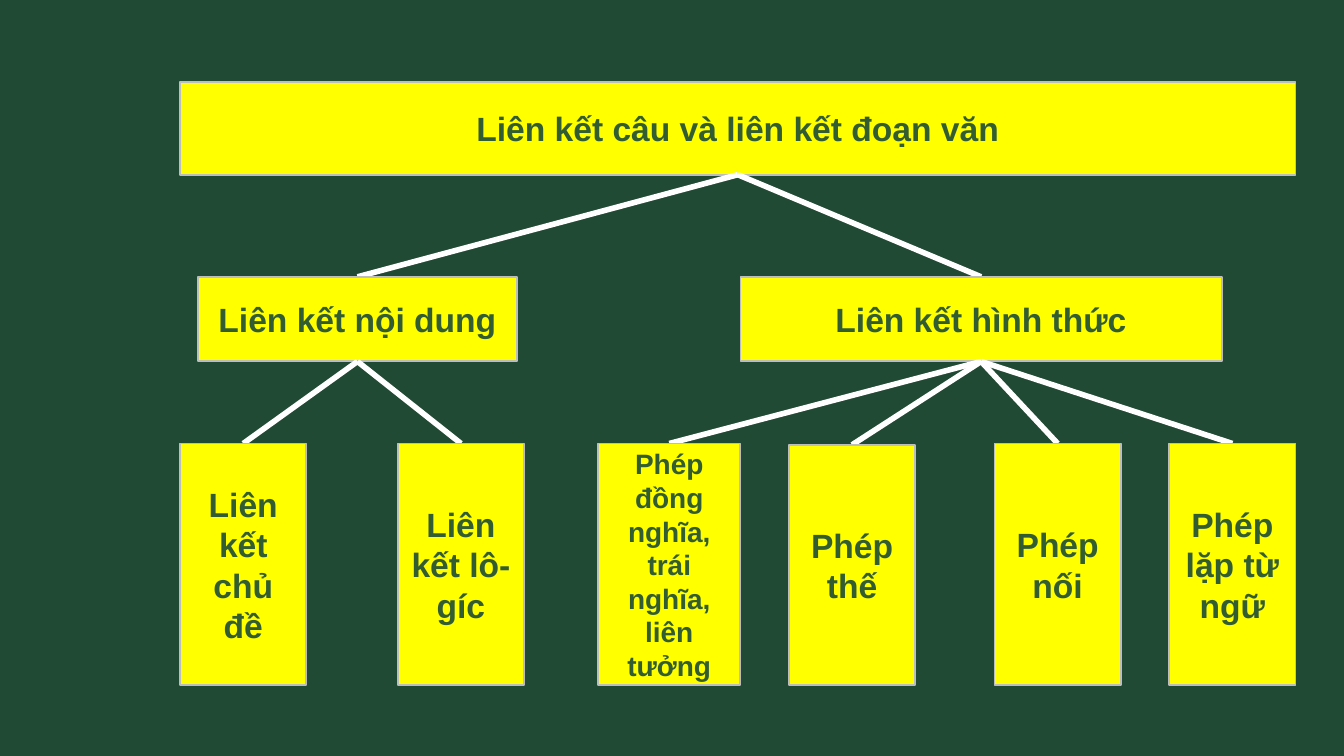
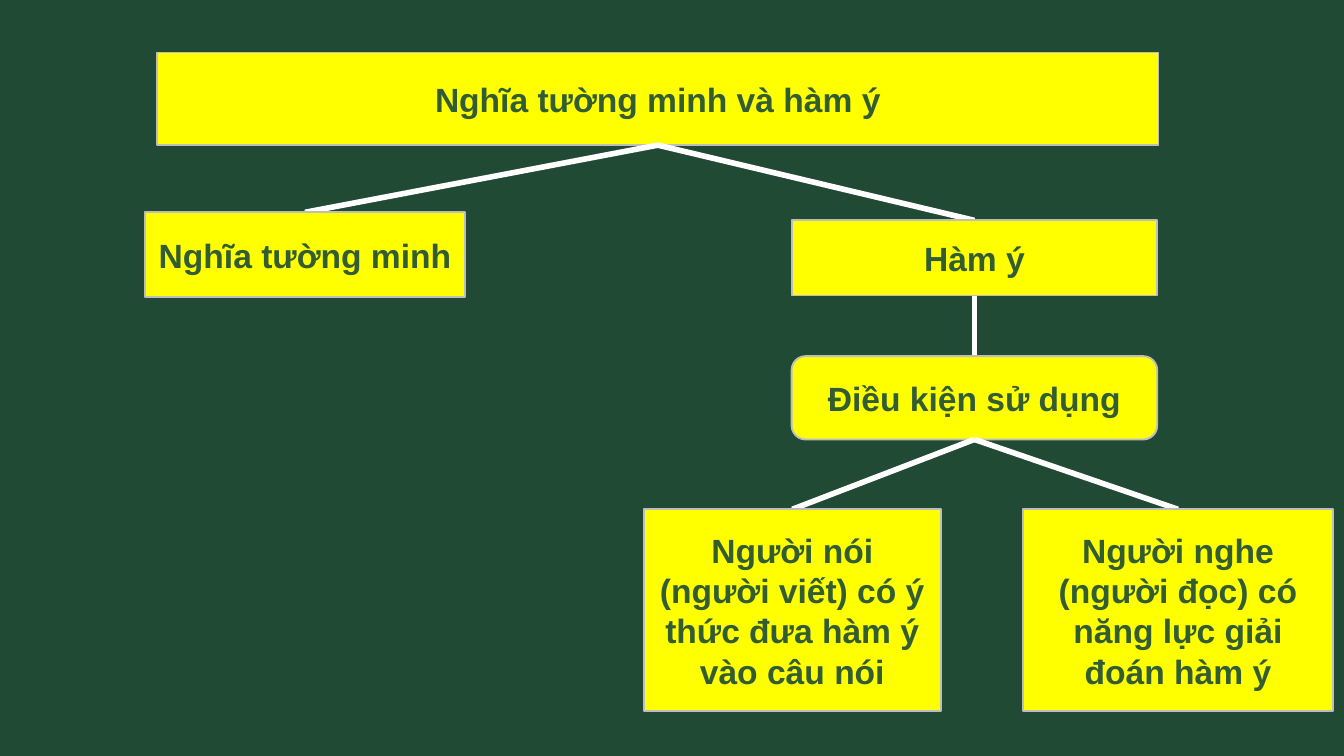
from dataclasses import dataclass

from lxml import etree
from pptx import Presentation
from pptx import slide as s
from pptx import util as u
from pptx.dml import color, fill
from pptx.enum import shapes, text
from pptx.oxml import ns
from pptx.shapes import autoshape

PX_PER_INCH = 100
SLIDE_WIDTH = 1000
BOARD = "214A34"
BOX_FILL = "FFFF00"
BOX_BORDER = "BDBDBD"
BOX_TEXT = "325C31"
BRANCH = "FFFFFF"
FONT = "Arial"
RECTANGLE = shapes.MSO_SHAPE.RECTANGLE
ROUNDED = shapes.MSO_SHAPE.ROUNDED_RECTANGLE
TOP, BOTTOM = 0, 2


@dataclass(frozen=True)
class Box:
    label: str
    left: int
    top: int
    width: int
    height: int
    children: tuple["Box", ...] = ()
    font_size: int = 18
    outline: shapes.MSO_SHAPE = RECTANGLE


def px(length: int) -> u.Emu:
    return u.Emu(length * u.Inches(1) // PX_PER_INCH)


def paint(target: fill.FillFormat, hex_colour: str) -> None:
    target.solid()
    target.fore_color.rgb = color.RGBColor.from_string(hex_colour)


def draw_box(slide: s.Slide, box: Box) -> autoshape.Shape:
    shape = slide.shapes.add_shape(
        box.outline, px(box.left), px(box.top), px(box.width), px(box.height)
    )
    shape.shadow.inherit = False
    paint(shape.fill, BOX_FILL)
    paint(shape.line.fill, BOX_BORDER)
    shape.line.width = u.Pt(1)

    frame = shape.text_frame
    frame.word_wrap = True
    frame.vertical_anchor = text.MSO_ANCHOR.MIDDLE
    frame.margin_left = frame.margin_right = px(7)
    frame.margin_top = frame.margin_bottom = px(4)
    frame.text = box.label
    paragraph = frame.paragraphs[0]
    paragraph.alignment = text.PP_ALIGN.CENTER
    for run in paragraph.runs:
        run.font.name = FONT
        run.font.size = u.Pt(box.font_size)
        run.font.bold = True
        paint(run.font.fill, BOX_TEXT)
    return shape


def draw_branch(slide: s.Slide, parent: autoshape.Shape, child: autoshape.Shape) -> None:
    branch = slide.shapes.add_connector(shapes.MSO_CONNECTOR.STRAIGHT, 0, 0, 0, 0)
    branch.begin_connect(parent, BOTTOM)
    branch.end_connect(child, TOP)
    paint(branch.line.fill, BRANCH)
    branch.line.width = u.Pt(3)
    etree.SubElement(branch.element.spPr, ns.qn("a:effectLst"))
    child.element.addprevious(branch.element)


def draw_tree(slide: s.Slide, box: Box) -> autoshape.Shape:
    parent = draw_box(slide, box)
    for child in box.children:
        draw_branch(slide, parent, draw_tree(slide, child))
    return parent


LINKING = Box("Liên kết câu và liên kết đoạn văn", 134, 61, 830, 69, (
    Box("Liên kết nội dung", 147, 206, 238, 63, (
        Box("Liên kết chủ đề", 134, 330, 94, 180),
        Box("Liên kết lô-gíc", 296, 330, 94, 180),
    )),
    Box("Liên kết hình thức", 551, 206, 358, 63, (
        Box("Phép đồng nghĩa, trái nghĩa, liên tưởng", 445, 330, 106, 180, font_size=15),
        Box("Phép thế", 587, 331, 94, 179),
        Box("Phép nối", 740, 330, 94, 180),
        Box("Phép lặp từ ngữ", 870, 330, 94, 180),
    )),
))

MEANING = Box("Nghĩa tường minh và hàm ý", 117, 39, 745, 69, (
    Box("Nghĩa tường minh", 108, 158, 238, 63),
    Box("Hàm ý", 589, 164, 272, 56, (
        Box("Điều kiện sử dụng", 589, 265, 272, 62, (
            Box("Người nói (người viết) có ý thức đưa hàm ý vào câu nói", 479, 379, 221, 150),
            Box("Người nghe (người đọc) có năng lực giải đoán hàm ý", 761, 379, 231, 150),
        ), outline=ROUNDED),
    )),
))


def main() -> None:
    presentation = Presentation()
    presentation.slide_width = px(SLIDE_WIDTH)
    presentation.slide_height = u.Emu(presentation.slide_width * 9 // 16)
    blank = presentation.slide_layouts[6]
    for tree in (LINKING, MEANING):
        slide = presentation.slides.add_slide(blank)
        paint(slide.background.fill, BOARD)
        draw_tree(slide, tree)
    presentation.save("out.pptx")


if __name__ == "__main__":
    main()
